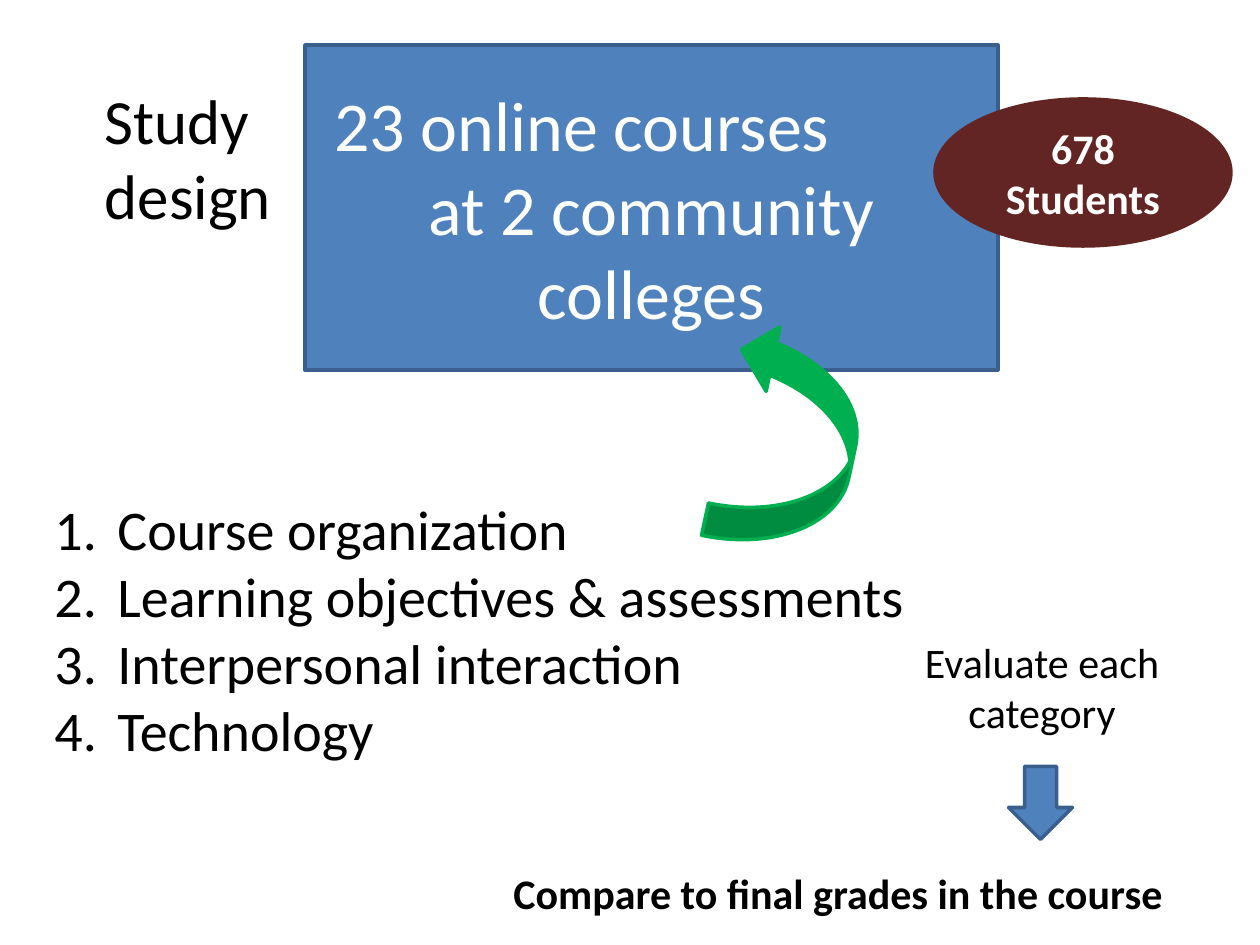
"""Build the study design slide."""
from dataclasses import dataclass

from lxml import etree
from pptx import Presentation
from pptx.dml.color import RGBColor
from pptx.enum.shapes import MSO_SHAPE
from pptx.enum.text import MSO_ANCHOR, MSO_AUTO_SIZE, PP_ALIGN
from pptx.oxml.ns import qn
from pptx.util import Emu, Pt

LEFT, CENTER = PP_ALIGN.LEFT, PP_ALIGN.CENTER
TOP, MIDDLE = MSO_ANCHOR.TOP, MSO_ANCHOR.MIDDLE
NO_AUTOFIT, GROW = MSO_AUTO_SIZE.NONE, MSO_AUTO_SIZE.SHAPE_TO_FIT_TEXT
RECTANGLE, ELLIPSE = MSO_SHAPE.RECTANGLE, MSO_SHAPE.OVAL
CURVED_ARROW, RIGHT_ARROW = MSO_SHAPE.CURVED_UP_ARROW, MSO_SHAPE.RIGHT_ARROW

FONT = "Calibri"
BLACK, WHITE = "000000", "FFFFFF"
BLUE, NAVY, GREEN, MAROON = "4F81BD", "3A5F8C", "00B050", "632523"
LIST_INDENT = 63
COURSES_INDENT = 17


@dataclass(frozen=True)
class Frame:
    """Place and size in px."""
    left: int
    top: int
    width: int
    height: int


@dataclass(frozen=True)
class Label:
    """Wording and its format."""
    text: str
    size: int
    color: str = BLACK
    bold: bool = False
    align: PP_ALIGN = LEFT


@dataclass(frozen=True)
class Figure:
    """A filled preset shape, with or without a label."""
    kind: MSO_SHAPE
    frame: Frame
    fill: str
    line: str
    rotation: float = 0
    label: Label | None = None


FIGURES = [
    Figure(RECTANGLE, Frame(305, 45, 693, 325), BLUE, NAVY,
           label=Label("23 online courses\nat 2 community colleges", 40, WHITE, align=CENTER)),
    Figure(CURVED_ARROW, Frame(678, 374, 223, 132), GREEN, GREEN, 282.1),
    Figure(RIGHT_ARROW, Frame(1004, 771, 73, 64), BLUE, NAVY, 90),
    Figure(ELLIPSE, Frame(935, 99, 296, 147), MAROON, MAROON,
           label=Label("678 Students", 24, WHITE, True, CENTER)),
]
CATEGORIES = Label("Course organization\nLearning objectives & assessments\n"
                   "Interpersonal interaction\nTechnology", 32)
NOTES = [
    (Frame(906, 630, 272, 115), Label("Evaluate each category", 24, align=CENTER)),
    (Frame(501, 861, 759, 63), Label("Compare to final grades in the course", 24, bold=True)),
]


def px(length: int) -> Emu:
    """Turn px into EMU."""
    return Emu(round(length * 914400 / 126))


def rgb(color: str) -> RGBColor:
    """Turn a hex string into a colour."""
    return RGBColor.from_string(color)


def place(shape, frame: Frame) -> None:
    """Move and size a shape."""
    shape.left, shape.top = px(frame.left), px(frame.top)
    shape.width, shape.height = px(frame.width), px(frame.height)


def write(shape, label: Label, anchor: MSO_ANCHOR, auto_size: MSO_AUTO_SIZE) -> None:
    """Set and format the text of a shape."""
    text_frame = shape.text_frame
    text_frame.text = label.text
    text_frame.word_wrap = True
    text_frame.auto_size = auto_size
    text_frame.vertical_anchor = anchor
    for para in text_frame.paragraphs:
        para.alignment = label.align
        for span in para.runs:
            span.font.name = FONT
            span.font.size = Pt(label.size)
            span.font.bold = label.bold
            span.font.color.rgb = rgb(label.color)


def indent(para, margin: int, hanging: int = 0) -> None:
    """Set the left margin and hanging indent of a paragraph."""
    properties = para._p.get_or_add_pPr()
    properties.set("marL", str(px(margin)))
    properties.set("indent", str(px(-hanging)))


def add_text(slide, frame: Frame, label: Label):
    """Add a text box that grows with its text."""
    box = slide.shapes.add_textbox(0, 0, 0, 0)
    write(box, label, TOP, GROW)
    place(box, frame)
    return box


def add_numbered_list(slide, frame: Frame, label: Label) -> None:
    """Add a text box with automatic numbers."""
    for para in add_text(slide, frame, label).text_frame.paragraphs:
        indent(para, LIST_INDENT, LIST_INDENT)
        properties = para._p.get_or_add_pPr()
        etree.SubElement(properties, qn("a:buFont"), typeface="+mj-lt")
        etree.SubElement(properties, qn("a:buAutoNum"), type="arabicPeriod")


def add_figure(slide, figure: Figure):
    """Add a preset shape."""
    shape = slide.shapes.add_shape(figure.kind, 0, 0, 0, 0)
    place(shape, figure.frame)
    shape.rotation = figure.rotation
    shape.shadow.inherit = False
    shape.fill.solid()
    shape.fill.fore_color.rgb = rgb(figure.fill)
    shape.line.color.rgb = rgb(figure.line)
    shape.line.width = Pt(2)
    if figure.label:
        write(shape, figure.label, MIDDLE, NO_AUTOFIT)
    return shape


def main() -> None:
    """Build and save the deck."""
    deck = Presentation()
    deck.slide_width, deck.slide_height = px(1260), px(945)
    slide = deck.slides.add_slide(deck.slide_layouts[5])
    title = slide.shapes.title
    place(title, Frame(92, 78, 346, 158))
    write(title, Label("Study design", 36), MIDDLE, NO_AUTOFIT)

    add_numbered_list(slide, Frame(42, 488, 999, 285), CATEGORIES)
    courses, *_ = [add_figure(slide, figure) for figure in FIGURES]
    first_line = courses.text_frame.paragraphs[0]
    first_line.alignment = LEFT
    indent(first_line, COURSES_INDENT)
    for frame, label in NOTES:
        add_text(slide, frame, label)
    deck.save("out.pptx")


if __name__ == "__main__":
    main()
